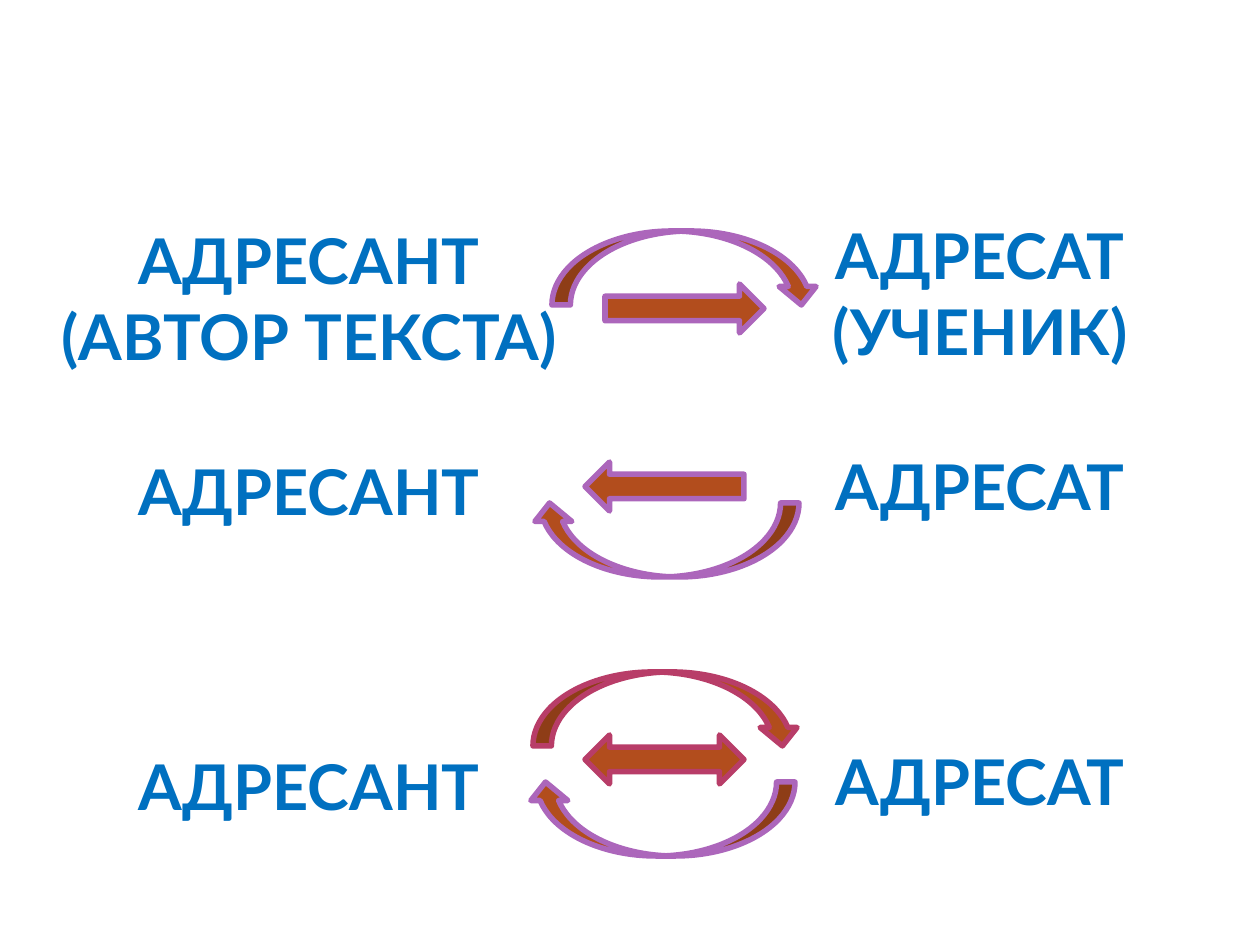
from pptx import Presentation
from pptx import util as u
from pptx.dml.color import RGBColor
from pptx.enum import shapes, text

PX = 914400 // 126
ORANGE, PURPLE, CRIMSON, BLUE = "B24D1D", "AC66BB", "B83D68", "0070C0"
STRAIGHT = shapes.MSO_SHAPE.RIGHT_ARROW
DOUBLE = shapes.MSO_SHAPE.LEFT_RIGHT_ARROW
CURVED = shapes.MSO_SHAPE.CURVED_DOWN_ARROW
SIZES = {STRAIGHT: (159, 49), DOUBLE: (159, 49), CURVED: (268, 74)}

SENDER_LEFT, RECEIVER_LEFT = 33, 704
LABEL_WIDTH, LINE_HEIGHT = 552, 76
RECEIVER_RISE = 5

# Row top, sender, receiver, and arrows as (kind, left, top in row, rotation, line)
ROWS = [
    (222, "АДРЕСАНТ\v(АВТОР ТЕКСТА)", "АДРЕСАТ\v(УЧЕНИК)",
     [(STRAIGHT, 605, 62, 0, PURPLE), (CURVED, 552, 9, 0, PURPLE)]),
    (453, "АДРЕСАНТ", "АДРЕСАТ",
     [(STRAIGHT, 585, 9, 180, PURPLE), (CURVED, 531, 50, 180, PURPLE)]),
    (748, "АДРЕСАНТ", "АДРЕСАТ",
     [(DOUBLE, 585, -13, 0, CRIMSON), (CURVED, 527, 34, 180, PURPLE),
      (CURVED, 533, -76, 0, CRIMSON)]),
]


def px(*lengths):
    return [u.Emu(length * PX) for length in lengths]


def color(value):
    return RGBColor.from_string(value)


def add_label(slide, left, top, words):
    height = LINE_HEIGHT * (words.count("\v") + 1)
    label = slide.shapes.add_textbox(*px(left, top, LABEL_WIDTH, height))
    frame = label.text_frame
    frame.word_wrap = True
    frame.margin_left = frame.margin_right = 0
    frame.margin_top = frame.margin_bottom = 0
    paragraph = frame.paragraphs[0]
    paragraph.text = words
    paragraph.alignment = text.PP_ALIGN.CENTER
    paragraph.font.name = "Lato"
    paragraph.font.size = u.Pt(36)
    paragraph.font.bold = True
    paragraph.font.color.rgb = color(BLUE)


def add_arrow(slide, kind, left, top, rotation, line):
    arrow = slide.shapes.add_shape(kind, *px(left, top, *SIZES[kind]))
    arrow.rotation = rotation
    arrow.shadow.inherit = False
    arrow.fill.solid()
    arrow.fill.fore_color.rgb = color(ORANGE)
    arrow.line.color.rgb = color(line)
    arrow.line.width = u.Pt(3.15)


def add_exchange(slide, top, sender, receiver, arrows):
    """Place one row: sender, receiver and the arrows between them."""
    add_label(slide, SENDER_LEFT, top, sender)
    add_label(slide, RECEIVER_LEFT, top - RECEIVER_RISE, receiver)
    for kind, left, offset, rotation, line in arrows:
        add_arrow(slide, kind, left, top + offset, rotation, line)


def main():
    presentation = Presentation()
    presentation.slide_width, presentation.slide_height = px(1260, 945)
    slide = presentation.slides.add_slide(presentation.slide_layouts[6])
    for row in ROWS:
        add_exchange(slide, *row)
    presentation.save("out.pptx")


if __name__ == "__main__":
    main()
